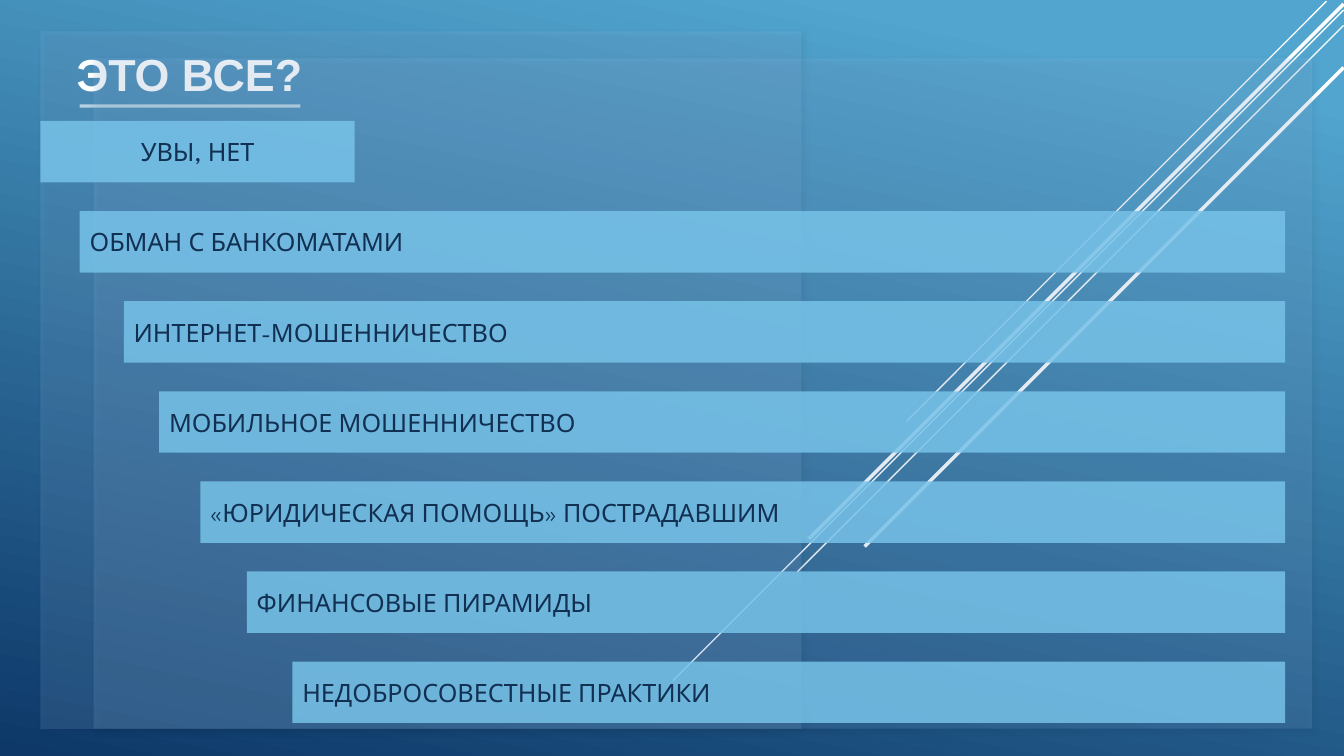
from dataclasses import dataclass

from lxml import etree
from pptx import Presentation
from pptx.dml.color import RGBColor as RGB
from pptx.enum.shapes import MSO_CONNECTOR as CONN, MSO_SHAPE as SHAPE
from pptx.enum.text import MSO_ANCHOR as ANCHOR, PP_ALIGN as ALIGN
from pptx.oxml.ns import qn
from pptx.util import Cm, Pt


@dataclass(frozen=True)
class Theme:
    """Colours, fonts and type sizes of the slide."""
    sky: RGB = RGB(0x51, 0xA5, 0xCF)
    navy: RGB = RGB(0x0D, 0x38, 0x68)
    panel: RGB = RGB(0x99, 0xCC, 0xFF)
    bar: RGB = RGB(0x77, 0xC2, 0xE8)
    ink: RGB = RGB(0x11, 0x30, 0x52)
    white: RGB = RGB(0xFF, 0xFF, 0xFF)
    title_font: str = "Arial"
    body_font: str = "League Spartan"
    title_size: int = 32
    body_size: int = 18


class Deck:
    """Draws styled elements on the current slide."""

    def __init__(self, prs, theme):
        """Add a blank slide to the presentation."""
        self.theme = theme
        self.slide = prs.slides.add_slide(prs.slide_layouts[6])

    def background(self):
        """Fill the slide with the sky-to-navy gradient."""
        fill = self.slide.background.fill
        fill.gradient()
        fill.gradient_angle = 258
        stops = ((0.1, self.theme.sky), (1, self.theme.navy))
        for stop, (position, color) in zip(fill.gradient_stops, stops):
            stop.position = position
            stop.color.rgb = color

    def alpha(self, parent, percent):
        """Set the opacity of the first colour below an element."""
        color = next(parent.iter(qn("a:srgbClr")))
        etree.SubElement(color, qn("a:alpha"), val=str(percent * 1000))

    def line(self, x1, y1, x2, y2, width, opacity=100):
        """Draw a white line between two points."""
        s = self.slide.shapes.add_connector(CONN.STRAIGHT, Cm(x1), Cm(y1), Cm(x2), Cm(y2))
        s.line.width = Pt(width)
        s.line.color.rgb = self.theme.white
        self.alpha(s._element.spPr, opacity)
        etree.SubElement(s._element.spPr, qn("a:effectLst"))

    def rect(self, x, y, w, h, color, opacity):
        """Draw a translucent rectangle without outline."""
        s = self.slide.shapes.add_shape(SHAPE.RECTANGLE, Cm(x), Cm(y), Cm(w), Cm(h))
        s.shadow.inherit = False
        s.fill.solid()
        s.fill.fore_color.rgb = color
        self.alpha(s._element.spPr, opacity)
        s.line.fill.background()
        return s

    def panel(self, x, y, w, h):
        """Draw a glass panel with a soft shadow."""
        s = self.rect(x, y, w, h, self.theme.panel, 15)
        effects = s._element.spPr.find(qn("a:effectLst"))
        shadow = etree.SubElement(effects, qn("a:outerShdw"), blurRad=str(Pt(4)),
                                  dist=str(Pt(3)), dir="2700000", algn="tl", rotWithShape="0")
        etree.SubElement(shadow, qn("a:srgbClr"), val="000000")
        self.alpha(shadow, 40)

    def label(self, s, text, font, size, color, anchor, align=ALIGN.LEFT, bold=False):
        """Put one paragraph into a shape."""
        tf = s.text_frame
        tf.word_wrap = True
        tf.vertical_anchor = anchor
        p = tf.paragraphs[0]
        p.alignment = align
        r = p.add_run()
        r.text = text
        r.font.name = font
        r.font.size = Pt(size)
        r.font.bold = bold
        r.font.color.rgb = color

    def title(self, text, x, y, w, h):
        """Add the slide title."""
        t = self.theme
        s = self.slide.shapes.add_textbox(Cm(x), Cm(y), Cm(w), Cm(h))
        self.label(s, text, t.title_font, t.title_size, t.white, ANCHOR.BOTTOM, bold=True)

    def bar(self, text, x, y, w, h, align=ALIGN.LEFT):
        """Draw a labelled bar."""
        t = self.theme
        s = self.rect(x, y, w, h, t.bar, 85)
        self.label(s, text, t.body_font, t.body_size, t.ink, ANCHOR.MIDDLE, align)


RAYS = [(33.43, 0.03, 10.58, 1), (33.86, 0.25, 16.9, 1), (33.86, 0.64, 13.77, 1),
        (33.86, 0.1, 13.48, 2.5), (33.86, 1.7, 12.07, 2.5)]
SCHEMES = [(2.01, "ОБМАН С БАНКОМАТАМИ"),
           (3.12, "ИНТЕРНЕТ-МОШЕННИЧЕСТВО"),
           (4.01, "МОБИЛЬНОЕ МОШЕННИЧЕСТВО"),
           (5.05, "«ЮРИДИЧЕСКАЯ ПОМОЩЬ» ПОСТРАДАВШИМ"),
           (6.22, "ФИНАНСОВЫЕ ПИРАМИДЫ"),
           (7.37, "НЕДОБРОСОВЕСТНЫЕ ПРАКТИКИ")]
BAR_TOP, BAR_STEP, BAR_HEIGHT, BAR_RIGHT = 3.05, 2.27, 1.55, 32.39


def main():
    """Build the slide and save it."""
    prs = Presentation()
    prs.slide_width, prs.slide_height = Cm(33.87), Cm(19.05)
    deck = Deck(prs, Theme())
    deck.background()
    for x, y, reach, width in RAYS:
        deck.line(x, y, x - reach, y + reach, width)
    deck.panel(1.02, 0.79, 19.18, 17.58)
    deck.title("ЭТО ВСЕ?", 1.68, 1.17, 17.27, 1.5)
    deck.line(2.01, 2.67, 7.57, 2.67, 2.25, 60)
    deck.panel(2.36, 1.47, 30.71, 16.89)
    deck.bar("УВЫ, НЕТ", 1.02, BAR_TOP, 7.92, BAR_HEIGHT, ALIGN.CENTER)
    for i, (x, text) in enumerate(SCHEMES, 1):
        deck.bar(text, x, BAR_TOP + i * BAR_STEP, BAR_RIGHT - x, BAR_HEIGHT)
    prs.save("out.pptx")


if __name__ == "__main__":
    main()
